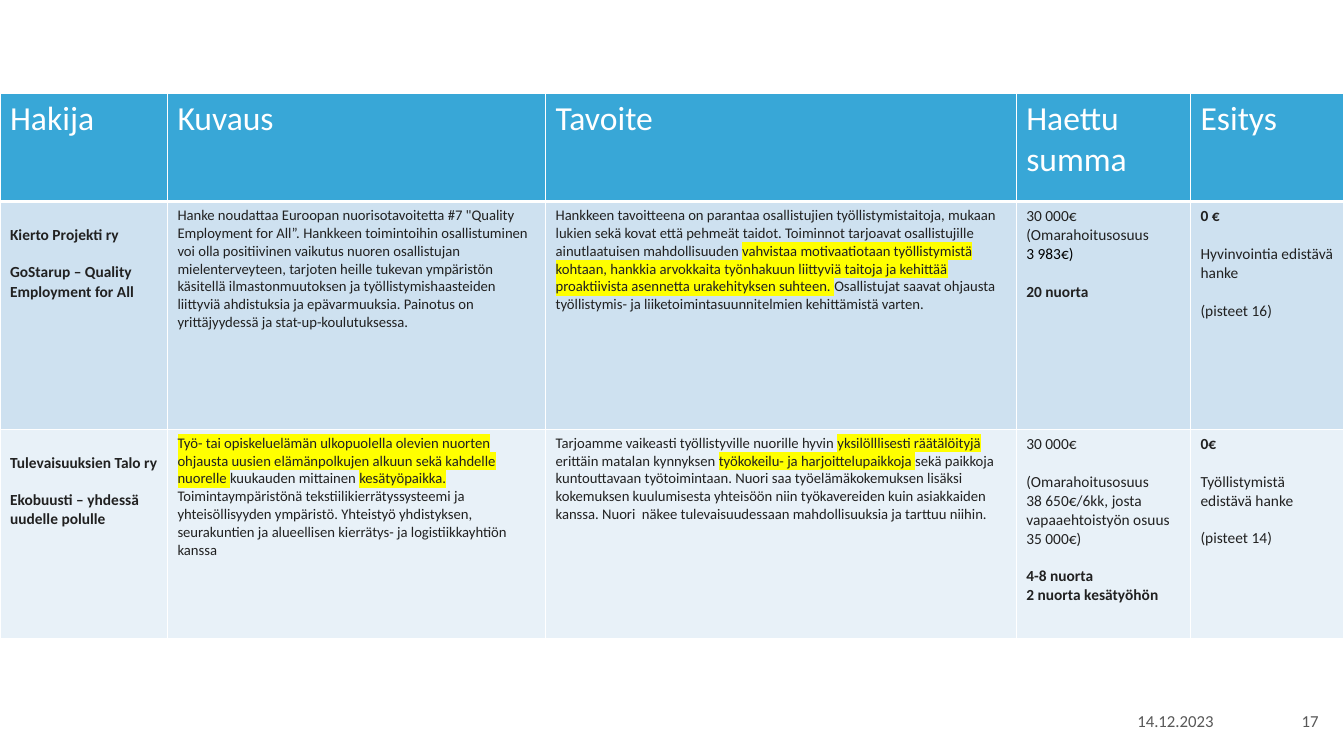
import pptx
import pptx.dml.color
import pptx.enum.text
import pptx.oxml
import pptx.oxml.ns
import pptx.util
from pptx.util import Cm

COLORS = {
    "header": "38A7D7",
    "odd_row": "CEE1F0",
    "even_row": "E8F1F8",
    "white": "FFFFFF",
    "black": "000000",
    "text": "212121",
    "footer": "585858",
    "highlight": "FFFF00",
}
FONT = "Calibri"
BLANK_LINE = 13.4
LEADING_GAP = Cm(0.6)
COLUMN_WIDTHS = [4.22, 9.53, 11.86, 4.39, 3.87]
ROW_HEIGHTS = [2.72, 5.74, 5.28]
HEADERS = ["Hakija", "Kuvaus", "Tavoite", "Haettu summa", "Esitys"]

BOLD = {"bold": True}
GAP = {"before": BLANK_LINE}
BOLD_GAP = {**BOLD, **GAP}
DETAIL = {"size": 10.5}

APPLICATIONS = [
    [
        [("Kierto Projekti ry", BOLD), ("GoStarup – Quality Employment for All", BOLD_GAP)],
        [("Hanke noudattaa Euroopan nuorisotavoitetta #7 \"Quality Employment for All”. "
          "Hankkeen toimintoihin osallistuminen voi olla positiivinen vaikutus nuoren "
          "osallistujan mielenterveyteen, tarjoten heille tukevan ympäristön käsitellä "
          "ilmastonmuutoksen ja työllistymishaasteiden liittyviä ahdistuksia ja "
          "epävarmuuksia. Painotus on yrittäjyydessä ja stat-up-koulutuksessa.", DETAIL)],
        [("Hankkeen tavoitteena on parantaa osallistujien työllistymistaitoja, mukaan "
          "lukien sekä kovat että pehmeät taidot. Toiminnot tarjoavat osallistujille "
          "ainutlaatuisen mahdollisuuden |vahvistaa motivaatiotaan työllistymistä kohtaan, "
          "hankkia arvokkaita työnhakuun liittyviä taitoja ja kehittää proaktiivista "
          "asennetta urakehityksen suhteen. |Osallistujat saavat ohjausta työllistymis- ja "
          "liiketoimintasuunnitelmien kehittämistä varten.", DETAIL)],
        [("30 000€", {}), ("(Omarahoitusosuus", {}), ("3 983€)", {"color": "black"}),
         ("20 nuorta", BOLD_GAP)],
        [("0 €", BOLD), ("Hyvinvointia edistävä hanke", GAP), ("(pisteet 16)", GAP)],
    ],
    [
        [("Tulevaisuuksien Talo ry", BOLD), ("Ekobuusti – yhdessä uudelle polulle", BOLD_GAP)],
        [("|Työ- tai opiskeluelämän ulkopuolella olevien nuorten ohjausta uusien "
          "elämänpolkujen alkuun sekä kahdelle nuorelle |kuukauden mittainen "
          "|kesätyöpaikka.| Toimintaympäristönä tekstiilikierrätyssysteemi ja "
          "yhteisöllisyyden ympäristö. Yhteistyö yhdistyksen, seurakuntien ja "
          "alueellisen kierrätys- ja logistiikkayhtiön kanssa", DETAIL)],
        [("Tarjoamme vaikeasti työllistyville nuorille hyvin |yksilölllisesti räätälöityjä "
          "|erittäin matalan kynnyksen |työkokeilu- ja harjoittelupaikkoja |sekä paikkoja "
          "kuntouttavaan työtoimintaan. Nuori saa työelämäkokemuksen lisäksi kokemuksen "
          "kuulumisesta yhteisöön niin työkavereiden kuin asiakkaiden kanssa. Nuori  näkee "
          "tulevaisuudessaan mahdollisuuksia ja tarttuu niihin.", DETAIL)],
        [("30 000€", {}), ("(Omarahoitusosuus", GAP),
         ("38 650€/6kk, josta vapaaehtoistyön osuus 35 000€)", {}),
         ("4-8 nuorta", BOLD_GAP), ("2 nuorta kesätyöhön", BOLD)],
        [("0€", BOLD), ("Työllistymistä edistävä hanke", GAP), ("(pisteet 14)", GAP)],
    ],
]


def rgb(color):
    return pptx.dml.color.RGBColor.from_string(COLORS[color])


def write_paragraph(paragraph, text, size=11, color="text", bold=False, before=0, align=None):
    paragraph.space_before = pptx.util.Pt(before)
    paragraph.alignment = align
    for index, segment in enumerate(text.split("|")):
        if not segment:
            continue
        run = paragraph.add_run()
        run.text = segment
        run.font.size = pptx.util.Pt(size)
        run.font.bold = bold
        run.font.name = FONT
        run.font.color.rgb = rgb(color)
        if index % 2:
            highlight = pptx.oxml.parse_xml(
                f'<a:highlight {pptx.oxml.ns.nsdecls("a")}>'
                f'<a:srgbClr val="{COLORS["highlight"]}"/></a:highlight>')
            run.font.fill._xPr.find(pptx.oxml.ns.qn("a:solidFill")).addnext(highlight)


class SlideBuilder:
    def __init__(self, presentation):
        self.slide = presentation.slides.add_slide(presentation.slide_layouts[6])

    def footer(self, text, left, width):
        shape = self.slide.shapes.add_textbox(Cm(left), Cm(17.66), Cm(width), Cm(1.01))
        frame = shape.text_frame
        frame.word_wrap = True
        frame.vertical_anchor = pptx.enum.text.MSO_ANCHOR.MIDDLE
        write_paragraph(frame.paragraphs[0], text, size=12, color="footer",
                        align=pptx.enum.text.PP_ALIGN.RIGHT)

    def borders(self, cell, widths):
        properties = cell._tc.get_or_add_tcPr()
        for index, (side, width) in enumerate(widths.items()):
            line = pptx.oxml.parse_xml(
                f'<a:ln{side} {pptx.oxml.ns.nsdecls("a")} w="{pptx.util.Pt(width)}">'
                f'<a:solidFill><a:srgbClr val="{COLORS["white"]}"/></a:solidFill></a:ln{side}>')
            properties.insert(index, line)

    def cell(self, cell, paragraphs, fill, widths):
        cell.fill.solid()
        cell.fill.fore_color.rgb = rgb(fill)
        self.borders(cell, widths)
        frame = cell.text_frame
        for index, (text, style) in enumerate(paragraphs):
            paragraph = frame.add_paragraph() if index else frame.paragraphs[0]
            write_paragraph(paragraph, text, **style)

    def table(self, rows):
        table = self.slide.shapes.add_table(
            len(rows), len(COLUMN_WIDTHS), Cm(0), Cm(2.36),
            Cm(sum(COLUMN_WIDTHS)), Cm(sum(ROW_HEIGHTS))).table
        for column, width in zip(table.columns, COLUMN_WIDTHS):
            column.width = Cm(width)
        fills = ["header", "odd_row", "even_row"]
        for row_index, (row, height) in enumerate(zip(rows, ROW_HEIGHTS)):
            table.rows[row_index].height = Cm(height)
            top = 3 if row_index == 1 else 1
            bottom = 3 if row_index == 0 else 1
            for column_index, paragraphs in enumerate(row):
                self.cell(table.cell(row_index, column_index), paragraphs, fills[row_index],
                          {"L": 1, "R": 1, "T": top, "B": bottom})
            if row_index:
                table.cell(row_index, 0).margin_top = LEADING_GAP


def main():
    presentation = pptx.Presentation()
    presentation.slide_width = Cm(33.87)
    presentation.slide_height = Cm(19.05)
    builder = SlideBuilder(presentation)
    builder.footer("14.12.2023", 27.79, 3.05)
    builder.footer("17", 31.12, 2.36)
    header = [[(title, {"size": 24, "color": "white"})] for title in HEADERS]
    builder.table([header, *APPLICATIONS])
    presentation.save("out.pptx")


if __name__ == "__main__":
    main()
